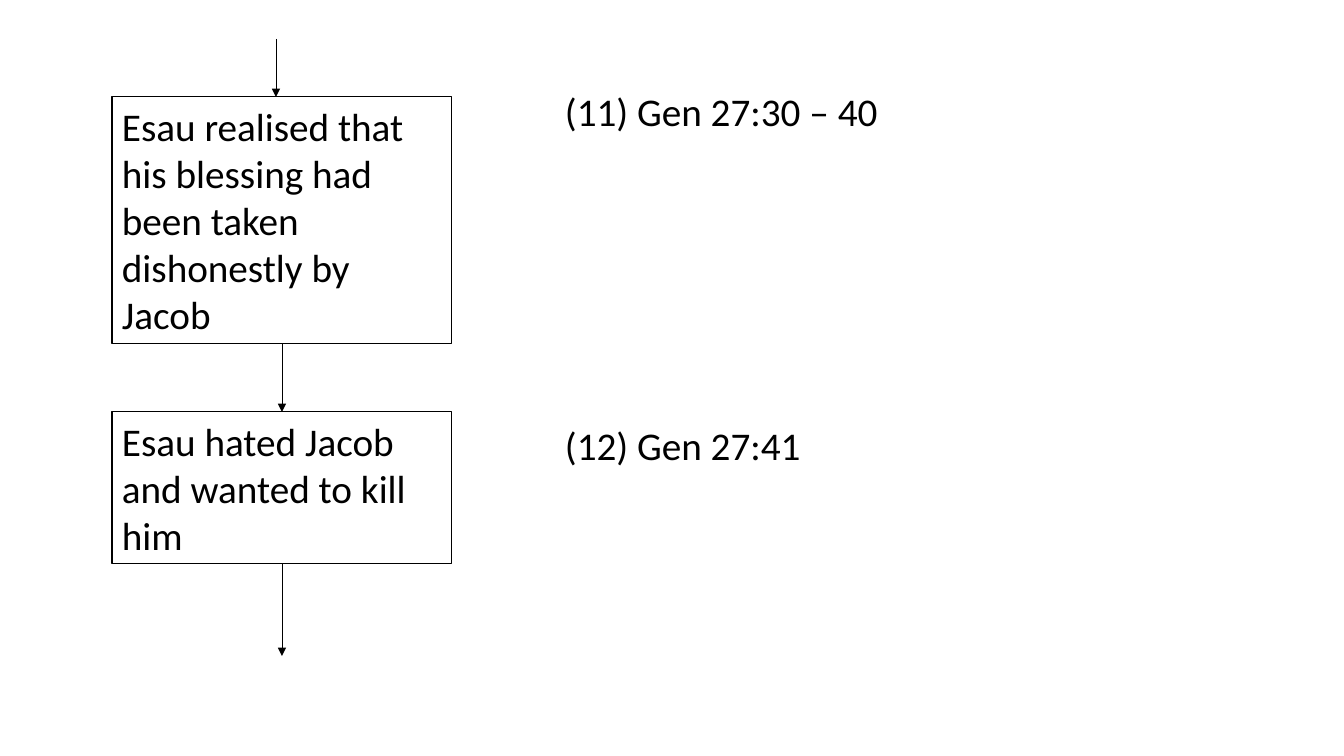
"""Build the Esau and Jacob flow chart slide with its Genesis references."""
from dataclasses import dataclass

import pptx
import pptx.dml.color
import pptx.enum.shapes
import pptx.enum.text
import pptx.oxml
import pptx.oxml.ns
import pptx.util

EVENTS = [
    {"text": "Esau realised that his blessing had been taken dishonestly by Jacob",
     "top": 97, "height": 247},
    {"text": "Esau hated Jacob and wanted to kill him", "top": 412, "height": 152},
]
REFERENCES = ["(11) Gen 27:30 – 40", "(12) Gen 27:41"]

SLIDE_SIZE = (1344, 756)
EVENT_LEFT, EVENT_WIDTH = 112, 340
ENTRY_X, ENTRY_TOP = 276, 39
EXIT_BOTTOM = 656
REFERENCE_AREA = (555, 82, 788, 390)
REFERENCE_GAP = pptx.util.Pt(205)
TOP_SIDE, BOTTOM_SIDE = 0, 2


@dataclass(frozen=True)
class Theme:
    ink: pptx.dml.color.RGBColor = pptx.dml.color.RGBColor(0, 0, 0)
    font: str = "Calibri"
    text_size: int = pptx.util.Pt(28)
    box_line: int = pptx.util.Pt(0.75)
    arrow_line: int = pptx.util.Pt(0.5)


THEME = Theme()


def px(length):
    return round(length * 914400 / 100.8)


def write(text_frame, lines, gap=0):
    text_frame.word_wrap = True
    text_frame.auto_size = pptx.enum.text.MSO_AUTO_SIZE.SHAPE_TO_FIT_TEXT
    text_frame.vertical_anchor = pptx.enum.text.MSO_ANCHOR.TOP
    for index, line in enumerate(lines):
        paragraph = text_frame.add_paragraph() if index else text_frame.paragraphs[0]
        paragraph.alignment = pptx.enum.text.PP_ALIGN.LEFT
        if index:
            paragraph.space_before = gap
        run = paragraph.add_run()
        run.text = line
        run.font.name = THEME.font
        run.font.size = THEME.text_size
        run.font.color.rgb = THEME.ink


def add_event(slide, event):
    shape = slide.shapes.add_shape(
        pptx.enum.shapes.MSO_SHAPE.RECTANGLE,
        px(EVENT_LEFT), px(event["top"]), px(EVENT_WIDTH), px(event["height"]))
    shape.shadow.inherit = False
    shape.fill.background()
    shape.line.color.rgb = THEME.ink
    shape.line.width = THEME.box_line
    write(shape.text_frame, [event["text"]])
    return shape


def add_arrow(slide, x, top, bottom):
    connector = slide.shapes.add_connector(
        pptx.enum.shapes.MSO_CONNECTOR.STRAIGHT, px(x), px(top), px(x), px(bottom))
    connector.line.color.rgb = THEME.ink
    connector.line.width = THEME.arrow_line
    line = connector.line._get_or_add_ln()
    line.append(pptx.oxml.parse_xml(
        f'<a:tailEnd {pptx.oxml.ns.nsdecls("a")} type="triangle"/>'))
    connector._element.spPr.append(pptx.oxml.parse_xml(
        f'<a:effectLst {pptx.oxml.ns.nsdecls("a")}/>'))
    return connector


def main():
    presentation = pptx.Presentation()
    presentation.slide_width, presentation.slide_height = map(px, SLIDE_SIZE)
    slide = presentation.slides.add_slide(presentation.slide_layouts[6])

    boxes = [add_event(slide, event) for event in EVENTS]
    add_arrow(slide, ENTRY_X, ENTRY_TOP, EVENTS[0]["top"])

    middle = EVENT_LEFT + EVENT_WIDTH / 2
    arrow_ends = [event["top"] for event in EVENTS[1:]] + [EXIT_BOTTOM]
    for index, (event, end) in enumerate(zip(EVENTS, arrow_ends)):
        arrow = add_arrow(slide, middle, event["top"] + event["height"], end)
        arrow.begin_connect(boxes[index], BOTTOM_SIDE)
        if index + 1 < len(boxes):
            arrow.end_connect(boxes[index + 1], TOP_SIDE)

    references = slide.shapes.add_textbox(*map(px, REFERENCE_AREA))
    write(references.text_frame, REFERENCES, REFERENCE_GAP)
    presentation.save("out.pptx")


if __name__ == "__main__":
    main()
